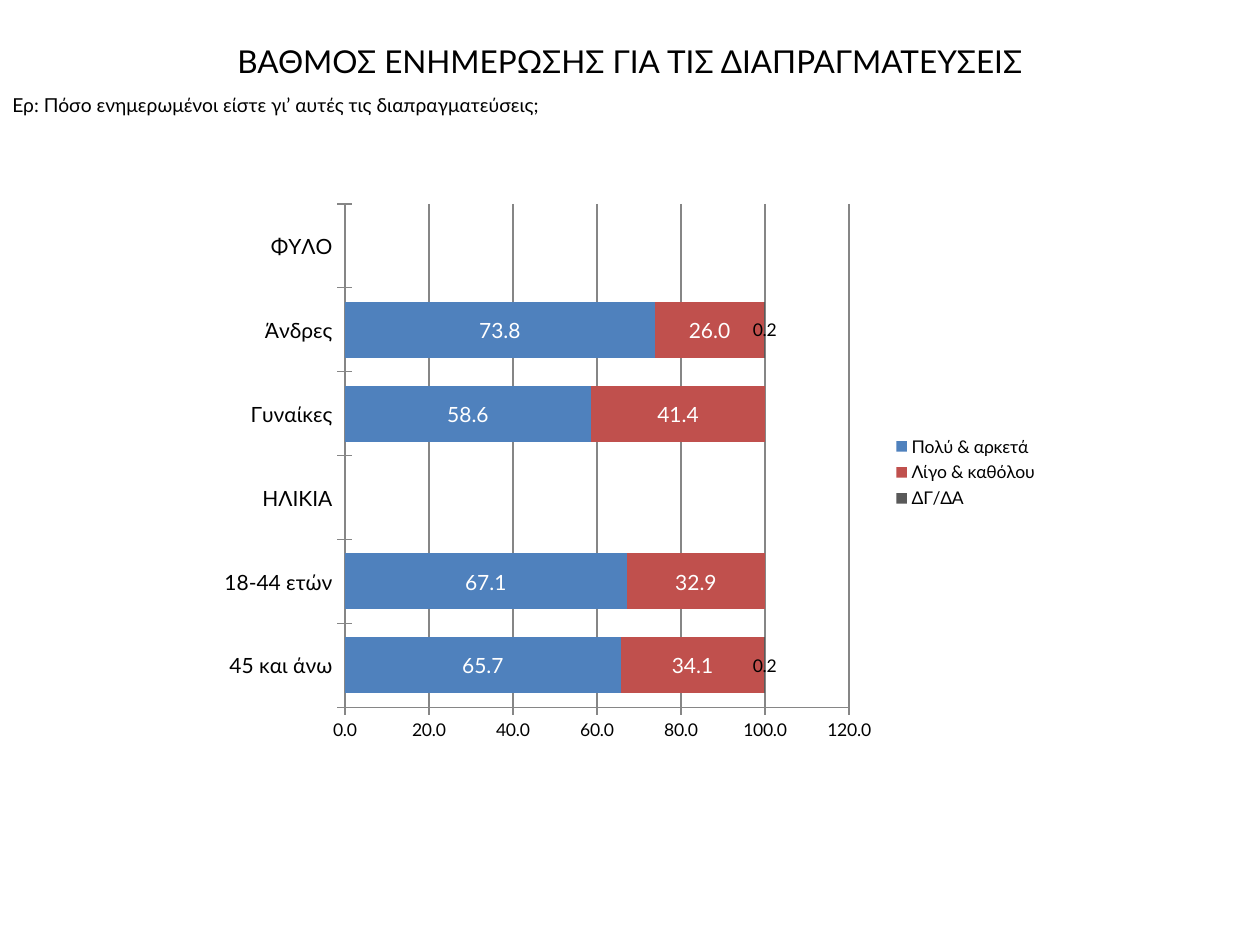
from dataclasses import dataclass

from lxml import etree
from pptx import Presentation
from pptx.chart.data import CategoryChartData
from pptx.dml.color import RGBColor
from pptx.enum.chart import XL_CHART_TYPE, XL_LEGEND_POSITION, XL_TICK_MARK
from pptx.enum.text import MSO_ANCHOR, PP_ALIGN
from pptx.oxml.ns import qn
from pptx.util import Inches, Pt

BAR_STACKED = XL_CHART_TYPE.BAR_STACKED
LEGEND_RIGHT = XL_LEGEND_POSITION.RIGHT
TICK_CROSS = XL_TICK_MARK.CROSS
TICK_NONE = XL_TICK_MARK.NONE
MIDDLE = MSO_ANCHOR.MIDDLE
LEFT, CENTER = PP_ALIGN.LEFT, PP_ALIGN.CENTER


@dataclass(frozen=True)
class Theme:
    """Fonts, type sizes in points and colours."""
    font: str = "Lato"
    chart_font: str = "TeX Gyre Pagella"
    title: int = 18
    question: int = 11
    category: int = 12
    small: int = 10
    ink: str = "000000"
    light: str = "FFFFFF"
    line: str = "868686"
    series: tuple = ("4F81BD", "C0504D", "595959")


THEME = Theme()
NUMBER_FORMAT = "0.0"
CATEGORIES = ("45 και άνω", "18-44 ετών", "ΗΛΙΚΙΑ", "Γυναίκες", "Άνδρες", "ΦΥΛΟ")
ANSWERS = {
    "Πολύ & αρκετά": (65.7, 67.1, None, 58.6, 73.8, None),
    "Λίγο & καθόλου": (34.1, 32.9, None, 41.4, 26, None),
    "ΔΓ/ΔΑ": (0.2, 0, None, 0, 0.2, None),
}


def style_font(font, size, color=THEME.ink, name=THEME.font):
    """Apply a typeface, size and colour to a font."""
    font.name = name
    font.size = Pt(size)
    font.color.rgb = RGBColor.from_string(color)


def add_text(page, text, left, top, width, height, size, align=LEFT):
    """Add a one-paragraph text box centred vertically."""
    box = page.shapes.add_textbox(Inches(left), Inches(top), Inches(width), Inches(height))
    frame = box.text_frame
    frame.word_wrap = True
    frame.vertical_anchor = MIDDLE
    para = frame.paragraphs[0]
    para.text = text
    para.alignment = align
    style_font(para.font, size)


def style_line(line):
    """Give an axis or gridline its thin grey stroke."""
    line.color.rgb = RGBColor.from_string(THEME.line)
    line.width = Pt(0.75)


def style_axis(axis, size):
    """Set the ticks, line and label type of an axis."""
    axis.major_tick_mark = TICK_CROSS
    axis.minor_tick_mark = TICK_NONE
    style_line(axis.format.line)
    style_font(axis.tick_labels.font, size)


def place_plot(chart, **fractions):
    """Fix the inner plot area as fractions of the chart."""
    area = chart.plots[0]._element.getparent()
    layout = area.find(qn("c:layout"))
    if layout is None:
        layout = etree.Element(qn("c:layout"))
        area.insert(0, layout)
    manual = etree.SubElement(layout, qn("c:manualLayout"))
    settings = {"layoutTarget": "inner", "xMode": "edge", "yMode": "edge", **fractions}
    for tag, value in settings.items():
        etree.SubElement(manual, qn(f"c:{tag}")).set("val", str(value))


def style_series(series, color):
    """Fill a series and label its bars, or only its non-zero slivers."""
    series.format.fill.solid()
    series.format.fill.fore_color.rgb = RGBColor.from_string(color)
    labels = series.data_labels
    labels.number_format = NUMBER_FORMAT
    labels.number_format_is_linked = False
    labels.show_value = all(value != 0 for value in series.values)
    if labels.show_value:
        style_font(labels.font, THEME.category, THEME.light)
        return
    for index, value in enumerate(series.values):
        if value:
            style_font(series.points[index].data_label.font, THEME.small)


def add_answer_chart(page, left, top, width, height):
    """Add the stacked bars of answers by sex and age."""
    data = CategoryChartData(number_format=NUMBER_FORMAT)
    data.categories = CATEGORIES
    for name, values in ANSWERS.items():
        data.add_series(name, values)
    chart = page.shapes.add_chart(
        BAR_STACKED, Inches(left), Inches(top), Inches(width), Inches(height), data
    ).chart
    style_font(chart.font, THEME.title, name=THEME.chart_font)
    chart.has_title = False
    chart.has_legend = True
    chart.legend.position = LEGEND_RIGHT
    chart.legend.include_in_layout = False
    style_font(chart.legend.font, THEME.small)

    plot = chart.plots[0]
    plot.gap_width = 50
    plot.overlap = 100
    plot.vary_by_categories = False
    for series, color in zip(plot.series, THEME.series):
        style_series(series, color)

    style_axis(chart.category_axis, THEME.category)
    value_axis = chart.value_axis
    style_axis(value_axis, THEME.small)
    value_axis.minimum_scale, value_axis.maximum_scale = 0, 120
    value_axis.major_unit = 20
    value_axis.tick_labels.number_format = NUMBER_FORMAT
    value_axis.tick_labels.number_format_is_linked = False
    style_line(value_axis.major_gridlines.format.line)
    place_plot(chart, x=0.16, y=0.02, w=0.6, h=0.9)


def main():
    """Build and save the slide."""
    deck = Presentation()
    deck.slide_width, deck.slide_height = Inches(10), Inches(7.5)
    page = deck.slides.add_slide(deck.slide_layouts[6])
    add_text(page, "Ερ: Πόσο ενημερωμένοι είστε γι’ αυτές τις διαπραγματεύσεις;",
             0, 0.68, 10, 0.31, THEME.question)
    add_text(page, "ΒΑΘΜΟΣ ΕΝΗΜΕΡΩΣΗΣ ΓΙΑ ΤΙΣ ΔΙΑΠΡΑΓΜΑΤΕΥΣΕΙΣ",
             0.12, 0.29, 9.76, 0.39, THEME.title, CENTER)
    add_answer_chart(page, 1.67, 1.53, 6.67, 4.44)
    deck.save("out.pptx")


if __name__ == "__main__":
    main()
